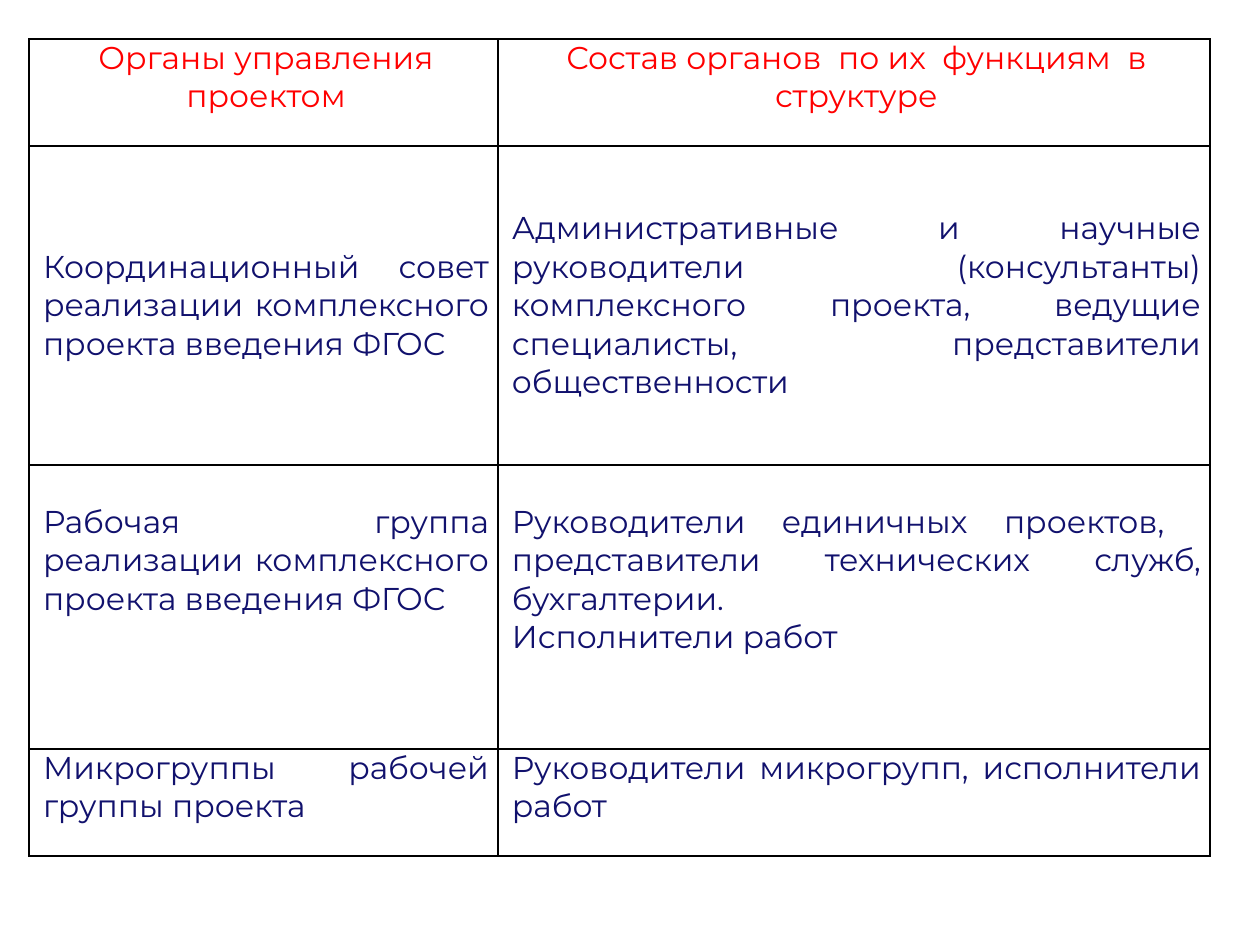
from dataclasses import dataclass

import pptx
import pptx.dml.color
import pptx.enum.text
import pptx.oxml
import pptx.oxml.ns
import pptx.util

EMU_PER_PX = 914400 / 126
COLORS = {"heading": "FF0000", "body": "11116D", "border": "000000", "paper": "FFFFFF"}
FONT = "Montserrat"
COLUMN_WIDTHS = (469, 712)
TABLE_LEFT, TABLE_TOP = 29, 39
SIDE_MARGIN, INDENT, TEXT_LINE = 9, 5, 38
ALIGN = pptx.enum.text.PP_ALIGN
ANCHOR = pptx.enum.text.MSO_ANCHOR


@dataclass(frozen=True)
class TableRow:
    height: int
    cells: tuple[tuple[str, ...], ...]
    color: str = "body"
    align: ALIGN = ALIGN.JUSTIFY
    anchor: ANCHOR = ANCHOR.TOP
    top_margin: int = 0


ROWS = (
    TableRow(
        107,
        (("Органы управления проектом",),
         ("Состав органов  по их  функциям  в структуре",)),
        color="heading",
        align=ALIGN.CENTER,
    ),
    TableRow(
        319,
        (("Координационный совет реализации комплексного проекта введения ФГОС",),
         ("Административные и научные руководители (консультанты) комплексного "
          "проекта, ведущие специалисты, представители общественности",)),
        anchor=ANCHOR.MIDDLE,
    ),
    TableRow(
        284,
        (("Рабочая группа реализации комплексного проекта введения ФГОС",),
         ("Руководители единичных проектов,  представители технических служб, "
          "бухгалтерии.",
          "Исполнители работ")),
        top_margin=TEXT_LINE,
    ),
    TableRow(
        107,
        (("Микрогруппы рабочей группы проекта",),
         ("Руководители микрогрупп, исполнители работ",)),
    ),
)


def px(length: int) -> pptx.util.Emu:
    return pptx.util.Emu(round(length * EMU_PER_PX))


def rgb(name: str) -> pptx.dml.color.RGBColor:
    return pptx.dml.color.RGBColor.from_string(COLORS[name])


def draw_borders(cell) -> None:
    properties = cell._tc.get_or_add_tcPr()
    for position, side in enumerate(("lnL", "lnR", "lnT", "lnB")):
        line = pptx.oxml.parse_xml(
            f'<a:{side} {pptx.oxml.ns.nsdecls("a")} w="{pptx.util.Pt(1)}">'
            f'<a:solidFill><a:srgbClr val="{COLORS["border"]}"/></a:solidFill></a:{side}>'
        )
        properties.insert(position, line)


def fill_cell(cell, paragraphs: tuple[str, ...], row: TableRow) -> None:
    cell.fill.solid()
    cell.fill.fore_color.rgb = rgb("paper")
    draw_borders(cell)
    cell.margin_left = cell.margin_right = px(SIDE_MARGIN)
    cell.margin_top, cell.margin_bottom = px(row.top_margin), 0
    cell.vertical_anchor = row.anchor
    for index, text in enumerate(paragraphs):
        frame = cell.text_frame
        para = frame.add_paragraph() if index else frame.paragraphs[0]
        para.alignment = row.align
        para._p.get_or_add_pPr().set("marL", str(px(INDENT)))
        span = para.add_run()
        span.text = text
        span.font.name = FONT
        span.font.size = pptx.util.Pt(18)
        span.font.bold = False
        span.font.color.rgb = rgb(row.color)


def draw_table(page) -> None:
    frame = page.shapes.add_table(
        len(ROWS), len(COLUMN_WIDTHS), px(TABLE_LEFT), px(TABLE_TOP),
        px(sum(COLUMN_WIDTHS)), px(sum(row.height for row in ROWS)),
    )
    table = frame.table
    table.first_row = table.horz_banding = False
    for column, width in zip(table.columns, COLUMN_WIDTHS):
        column.width = px(width)
    for table_row, row in zip(table.rows, ROWS):
        table_row.height = px(row.height)
        for cell, paragraphs in zip(table_row.cells, row.cells):
            fill_cell(cell, paragraphs, row)


def main() -> None:
    deck = pptx.Presentation()
    deck.slide_width, deck.slide_height = px(1260), px(945)
    page = deck.slides.add_slide(deck.slide_layouts[6])
    draw_table(page)
    deck.save("out.pptx")


if __name__ == "__main__":
    main()
